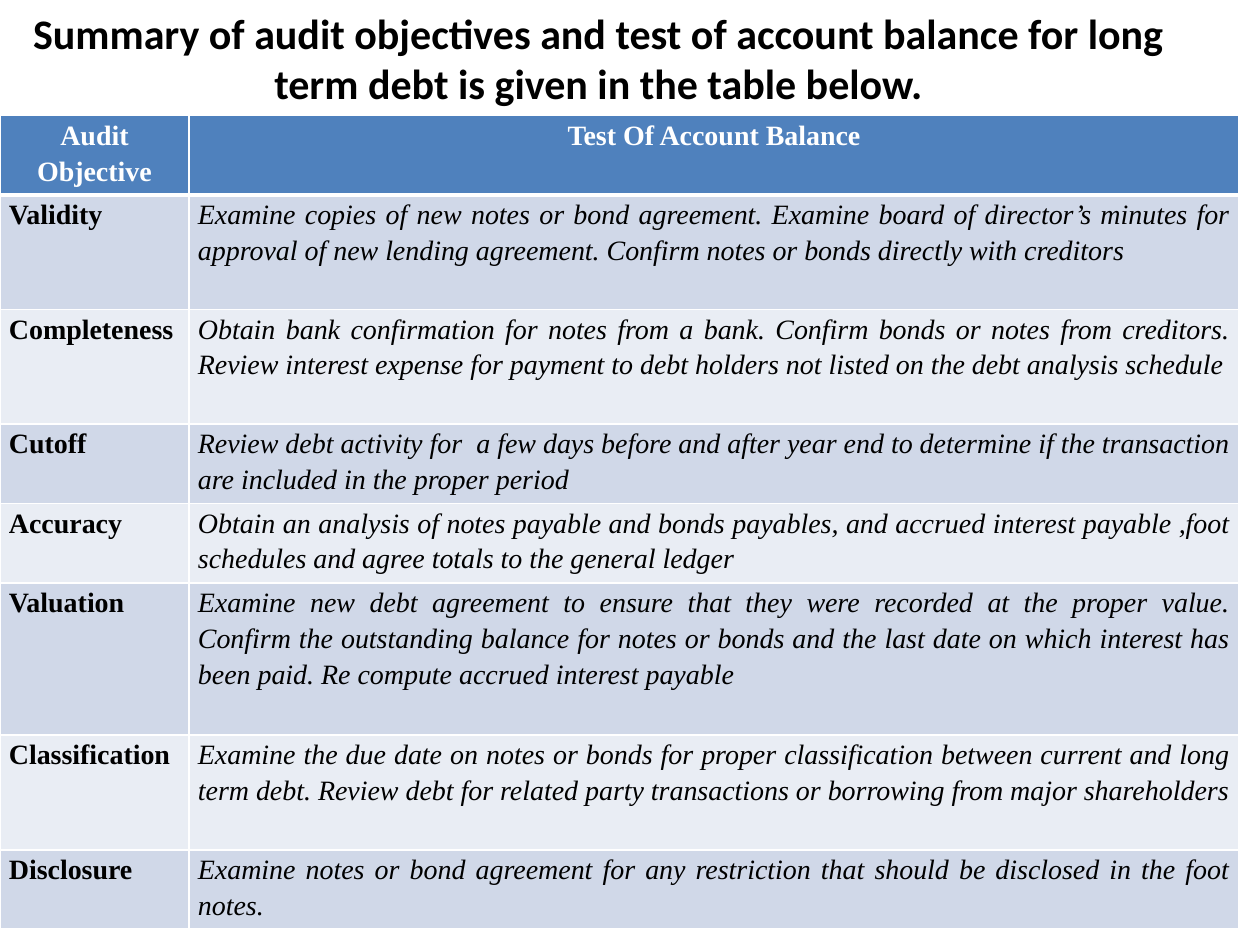
from dataclasses import dataclass

from lxml.etree import SubElement
from pptx import Presentation
from pptx.dml.color import RGBColor
from pptx.enum.text import MSO_ANCHOR as Anchor, PP_ALIGN as Align
from pptx.oxml.ns import qn
from pptx.util import Cm, Pt


@dataclass(frozen=True)
class Theme:
    title_font: str = "Calibri"
    table_font: str = "Times New Roman"
    title_size: int = 24
    table_size: int = 16
    ink: str = "000000"
    white: str = "FFFFFF"
    header_fill: str = "4F81BD"
    band_fills: tuple = ("D0D8E8", "E9EDF4")
    rule: int = 1
    header_rule: int = 3


TITLE = ("Summary of audit objectives and test of account balance for long "
         "term debt is given in the table below.")
HEADINGS = ("Audit Objective", "Test Of Account Balance")
HEADER_HEIGHT = 1.6
# Objective, test of account balance, row height in cm
OBJECTIVES = [
    ("Validity",
     "Examine copies of new notes or bond agreement. Examine board of director’s "
     "minutes for approval of new lending agreement. Confirm notes or bonds "
     "directly with creditors", 2.31),
    ("Completeness",
     "Obtain bank confirmation for notes from a bank. Confirm bonds or notes from "
     "creditors. Review interest expense for payment to debt holders not listed on "
     "the debt analysis schedule", 2.31),
    ("Cutoff",
     "Review debt activity for  a few days before and after year end to determine "
     "if the transaction are included in the proper period", 1.6),
    ("Accuracy",
     "Obtain an analysis of notes payable and bonds payables, and accrued interest "
     "payable ,foot schedules and agree totals to the general ledger", 1.6),
    ("Valuation",
     "Examine new debt agreement to ensure that they were recorded at the proper "
     "value. Confirm the outstanding balance for notes or bonds and the last date "
     "on which interest has been paid. Re compute accrued interest payable", 3.07),
    ("Classification",
     "Examine the due date on notes or bonds for proper classification between "
     "current and long term debt. Review debt for related party transactions or "
     "borrowing from major shareholders", 2.31),
    ("Disclosure",
     "Examine notes or bond agreement for any restriction that should be disclosed "
     "in the foot notes.", 1.6),
]


class SlideBuilder:
    def __init__(self, slide, theme):
        self.slide = slide
        self.theme = theme

    def add_run(self, paragraph, text, font, size, color, bold=True, italic=False):
        run = paragraph.add_run()
        run.text = text
        run.font.name = font
        run.font.size = Pt(size)
        run.font.bold = bold
        run.font.italic = italic
        run.font.color.rgb = RGBColor.from_string(color)

    def add_title(self, text, left, top, width, height):
        theme = self.theme
        shape = self.slide.shapes.add_textbox(Cm(left), Cm(top), Cm(width), Cm(height))
        frame = shape.text_frame
        frame.word_wrap = True
        frame.vertical_anchor = Anchor.MIDDLE
        paragraph = frame.paragraphs[0]
        paragraph.alignment = Align.CENTER
        self.add_run(paragraph, text, theme.title_font, theme.title_size, theme.ink)

    def add_borders(self, cell, **widths):
        """Draw cell borders; widths in points by tag, in schema order."""
        properties = cell._tc.get_or_add_tcPr()
        for tag, width in widths.items():
            line = SubElement(properties, qn(f"a:{tag}"), w=str(Pt(width)))
            fill = SubElement(line, qn("a:solidFill"))
            SubElement(fill, qn("a:srgbClr"), val=self.theme.white)

    def fill_cell(self, cell, text, fill, color, alignment, bold=True, italic=False):
        theme = self.theme
        cell.margin_left = cell.margin_right = Cm(0.18)
        cell.margin_top = cell.margin_bottom = 0
        cell.fill.solid()
        cell.fill.fore_color.rgb = RGBColor.from_string(fill)
        paragraph = cell.text_frame.paragraphs[0]
        paragraph.alignment = alignment
        paragraph.line_spacing = 1.15
        self.add_run(paragraph, text, theme.table_font, theme.table_size, color,
                     bold, italic)

    def add_objectives_table(self, left, top, column_widths):
        theme = self.theme
        heights = [HEADER_HEIGHT] + [height for *_, height in OBJECTIVES]
        table = self.slide.shapes.add_table(
            len(heights), len(column_widths), Cm(left), Cm(top),
            Cm(sum(column_widths)), Cm(sum(heights))).table
        for column, width in zip(table.columns, column_widths):
            column.width = Cm(width)
        for index, height in enumerate(heights):
            table.rows[index].height = Cm(height)
            for cell in table.rows[index].cells:
                self.add_borders(
                    cell, lnL=theme.rule, lnR=theme.rule,
                    lnT=theme.header_rule if index == 1 else theme.rule,
                    lnB=theme.header_rule if index == 0 else theme.rule)

        for column, heading in enumerate(HEADINGS):
            self.fill_cell(table.cell(0, column), heading, theme.header_fill,
                           theme.white, Align.CENTER)
        for index, (objective, test, _) in enumerate(OBJECTIVES):
            fill = theme.band_fills[index % 2]
            self.fill_cell(table.cell(index + 1, 0), objective, fill, theme.ink,
                           Align.LEFT)
            self.fill_cell(table.cell(index + 1, 1), test, fill, theme.ink,
                           Align.JUSTIFY, bold=False, italic=True)


def main():
    presentation = Presentation()
    presentation.slide_width = Cm(25.4)
    presentation.slide_height = Cm(19.05)
    slide = presentation.slides.add_slide(presentation.slide_layouts[6])
    builder = SlideBuilder(slide, Theme())
    builder.add_title(TITLE, 0, 0, 24.13, 2.33)
    builder.add_objectives_table(0, 2.33, (3.81, 21.17))
    presentation.save("out.pptx")


if __name__ == "__main__":
    main()
